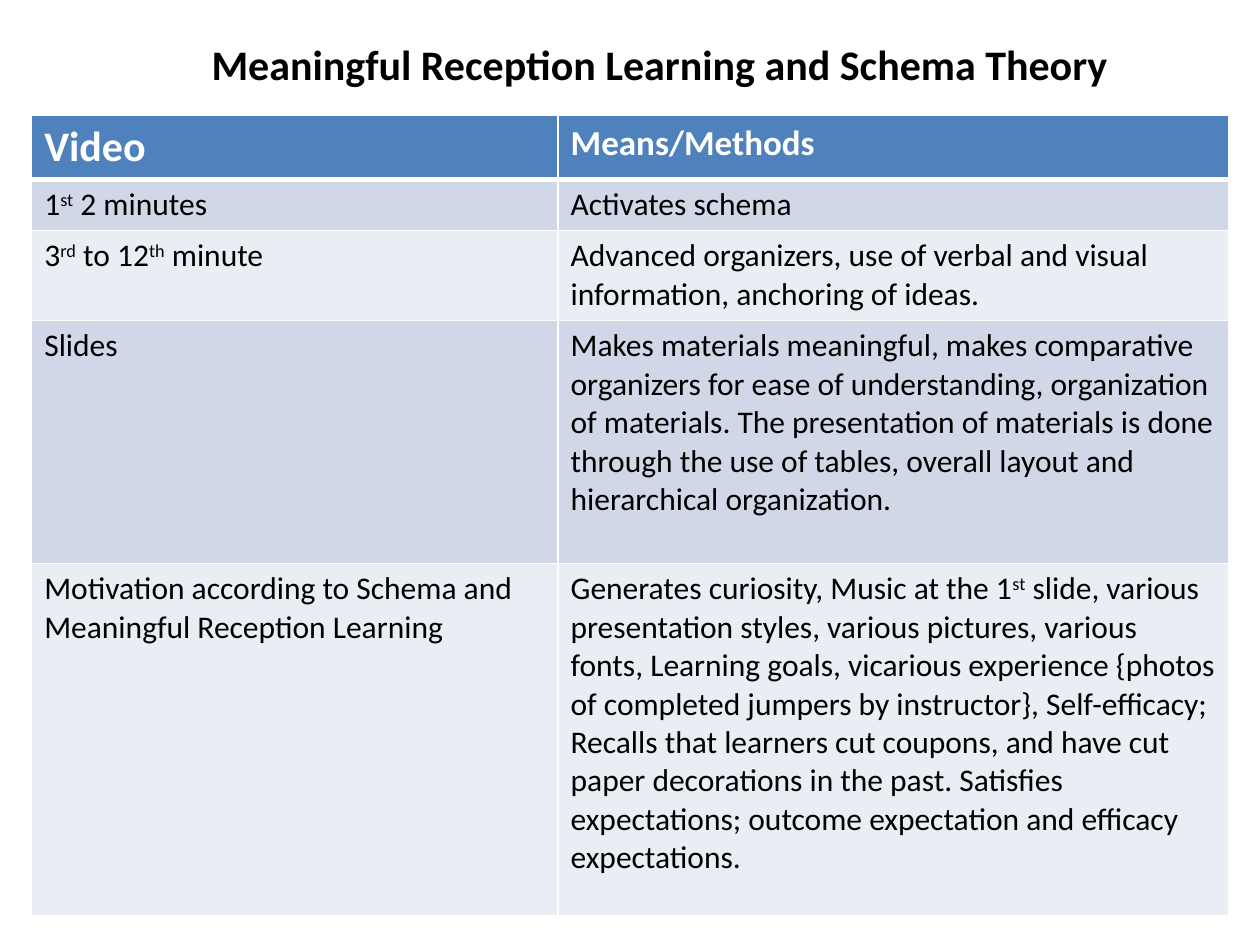
from lxml.etree import SubElement
from pptx import Presentation
from pptx.dml.color import RGBColor
from pptx.enum.text import MSO_ANCHOR, PP_ALIGN
from pptx.oxml.ns import qn
from pptx.util import Cm, Pt

COLORS = {
    "white": "FFFFFF",
    "black": "000000",
    "header": "4F81BD",
    "odd": "D0D8E8",
    "even": "E9EDF4",
}
COLUMN_WIDTHS = [10.61, 13.52]
ROW_HEIGHTS = [1.27, 1.03, 1.81, 4.9, 7.1]
HEADER_SIZES = [24, 20]
ROWS = [
    ("Video", "Means/Methods"),
    ("1^st^ 2 minutes", "Activates schema"),
    (
        "3^rd^ to 12^th^ minute",
        "Advanced organizers, use of verbal and visual information, anchoring of ideas.",
    ),
    (
        "Slides",
        "Makes materials meaningful, makes comparative organizers for ease of "
        "understanding, organization of materials. The presentation of materials is "
        "done through the use of tables, overall layout and hierarchical organization.",
    ),
    (
        "Motivation according to Schema and Meaningful Reception Learning",
        "Generates curiosity, Music at the 1^st^ slide, various presentation styles, "
        "various pictures, various fonts, Learning goals, vicarious experience {photos "
        "of completed jumpers by instructor}, Self-efficacy; Recalls that learners cut "
        "coupons, and have cut paper decorations in the past. Satisfies expectations; "
        "outcome expectation and efficacy expectations.",
    ),
]


class SlideBuilder:
    font_name = "Calibri"

    def __init__(self, slide):
        self.slide = slide

    def add_text(self, paragraph, text, size, color, bold=False):
        for index, part in enumerate(text.split("^")):
            run = paragraph.add_run()
            run.text = part
            if index % 2:
                run.font._element.set("baseline", "30000")
        font = paragraph.font
        font.name = self.font_name
        font.size = Pt(size)
        font.bold = bold
        font.color.rgb = RGBColor.from_string(COLORS[color])

    def add_title(self, text, left, top, width, height):
        title = self.slide.shapes.title
        title.left, title.top = Cm(left), Cm(top)
        title.width, title.height = Cm(width), Cm(height)
        title.text_frame.vertical_anchor = MSO_ANCHOR.MIDDLE
        paragraph = title.text_frame.paragraphs[0]
        paragraph.alignment = PP_ALIGN.LEFT
        self.add_text(paragraph, text, 24, "black", bold=True)

    def add_borders(self, cell, bottom_width):
        properties = cell._tc.get_or_add_tcPr()
        widths = {"a:lnL": 1, "a:lnR": 1, "a:lnT": 1, "a:lnB": bottom_width}
        for tag, width in widths.items():
            line = SubElement(properties, qn(tag), w=str(Pt(width)))
            fill = SubElement(line, qn("a:solidFill"))
            SubElement(fill, qn("a:srgbClr"), val=COLORS["white"])

    def add_table(self, rows, left, top):
        table = self.slide.shapes.add_table(
            len(rows), len(COLUMN_WIDTHS), Cm(left), Cm(top),
            Cm(sum(COLUMN_WIDTHS)), Cm(sum(ROW_HEIGHTS)),
        ).table
        for column, width in zip(table.columns, COLUMN_WIDTHS):
            column.width = Cm(width)
        for row, height in zip(table.rows, ROW_HEIGHTS):
            row.height = Cm(height)
        for row_index, texts in enumerate(rows):
            is_header = row_index == 0
            band = "header" if is_header else "odd" if row_index % 2 else "even"
            for column_index, text in enumerate(texts):
                cell = table.cell(row_index, column_index)
                self.add_borders(cell, 3 if is_header else 1)
                cell.fill.solid()
                cell.fill.fore_color.rgb = RGBColor.from_string(COLORS[band])
                size = HEADER_SIZES[column_index] if is_header else 18
                color = "white" if is_header else "black"
                self.add_text(cell.text_frame.paragraphs[0], text, size, color, is_header)


def main():
    presentation = Presentation()
    presentation.slide_width = Cm(25.4)
    presentation.slide_height = Cm(19.05)
    slide = presentation.slides.add_slide(presentation.slide_layouts[5])
    builder = SlideBuilder(slide)
    builder.add_table(ROWS, 0.64, 2.33)
    builder.add_title("Meaningful Reception Learning and Schema Theory", 4.01, 0.64, 19.25, 1.27)
    presentation.save("out.pptx")


if __name__ == "__main__":
    main()
